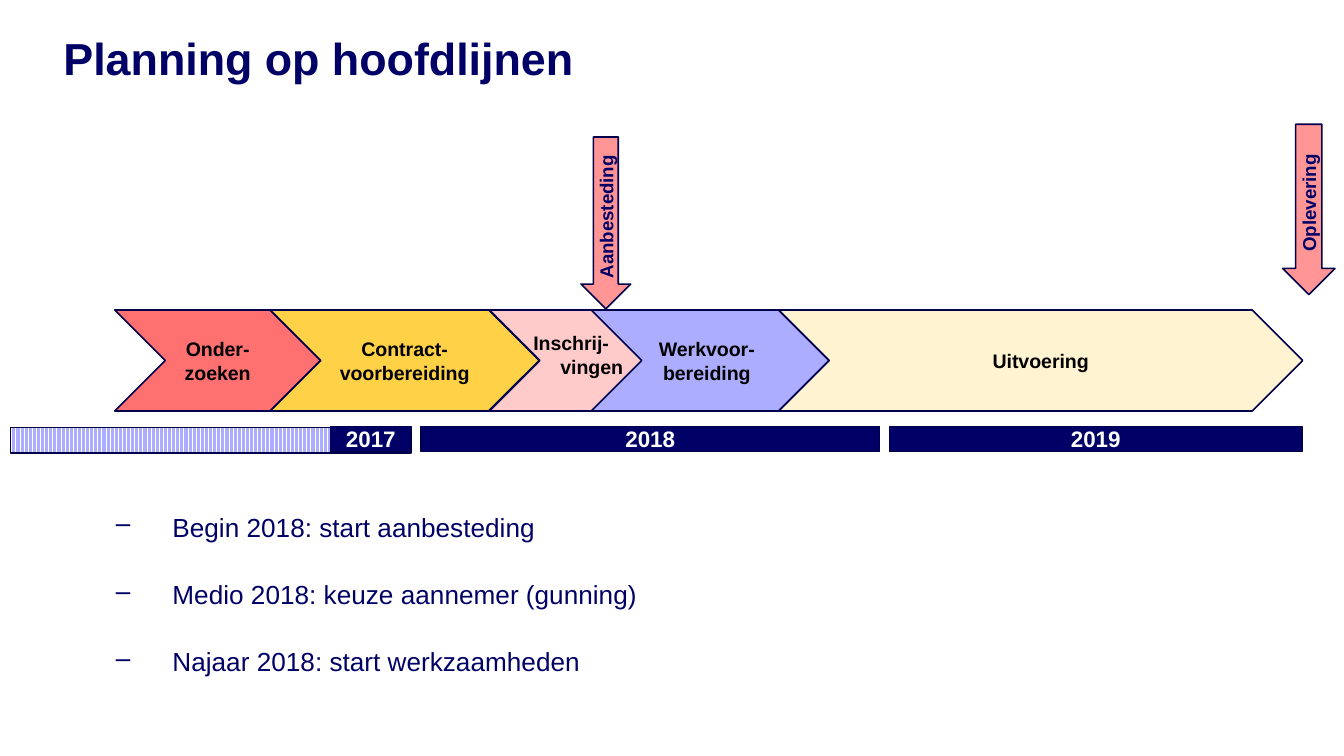
from lxml import etree
from pptx import Presentation
from pptx.dml.color import RGBColor
from pptx.enum.dml import MSO_PATTERN
from pptx.enum.shapes import MSO_SHAPE
from pptx.enum.text import MSO_ANCHOR, PP_ALIGN
from pptx.oxml.ns import qn
from pptx.util import Cm, Pt

RECT, CHEVRON, ARROW = MSO_SHAPE.RECTANGLE, MSO_SHAPE.CHEVRON, MSO_SHAPE.DOWN_ARROW
STRIPES = MSO_PATTERN.DARK_VERTICAL
CENTER, LEFT = PP_ALIGN.CENTER, PP_ALIGN.LEFT
MIDDLE, TOP = MSO_ANCHOR.MIDDLE, MSO_ANCHOR.TOP

COLORS = {
    "navy": "000066", "edge": "00004B", "black": "000000", "white": "FFFFFF",
    "red": "FF7070", "gold": "FFD147", "lilac": "ADADFF", "pink": "FFCACA",
    "cream": "FFF3D1", "rose": "FF9595",
}


def color(name):
    return RGBColor.from_string(COLORS[name])


def style(para, size, ink, bold=True, align=LEFT):
    para.alignment = align
    font = para.font
    font.name, font.size, font.bold = "Arial", Pt(size), bold
    font.color.rgb = color(ink)


def add_text(slide, box):
    frame = slide.shapes.add_textbox(*map(Cm, box)).text_frame
    frame.word_wrap = True
    frame.vertical_anchor = TOP
    frame.margin_left = frame.margin_right = 0
    frame.margin_top = frame.margin_bottom = 0
    return frame


def add_block(slide, kind, box, fill, text="", size=10.5, ink="black"):
    shape = slide.shapes.add_shape(kind, *map(Cm, box))
    shape.shadow.inherit = False
    shape.fill.solid()
    shape.fill.fore_color.rgb = color(fill)
    shape.line.color.rgb = color("edge")
    shape.line.width = Pt(0.85)
    if text:
        frame = shape.text_frame
        frame.word_wrap = True
        frame.vertical_anchor = MIDDLE
        frame.text = text
        style(frame.paragraphs[0], size, ink, align=CENTER)
    return shape


def add_title(slide, box):
    para = add_text(slide, box).paragraphs[0]
    para.text = "Planning op hoofdlijnen"
    style(para, 24, "navy")


def add_phases(slide, box):
    left, top, width, height = box
    phases = [
        (0, 3.89, "red", "Onder-zoeken"),
        (2.94, 5.08, "gold", "Contract-voorbereiding"),
        (8.88, 4.62, "lilac", "Werkvoor-bereiding"),
        (7.08, 2.88, "pink", ""),
        (12.55, width - 12.55, "cream", "Uitvoering"),
    ]
    for start, span, fill, text in phases:
        add_block(slide, CHEVRON, (left + start, top, span, height), fill, text)
    frame = add_text(slide, (left + 7.91, top + 0.4, 2.74, 0.9))
    frame.text = "Inschrij-\nvingen"
    for para in frame.paragraphs:
        style(para, 10.5, "black")
    frame.paragraphs[1]._p.get_or_add_pPr().set("marL", str(Cm(0.51)))


def add_marker(slide, box, text):
    shape = add_block(slide, ARROW, box, "rose", text, 10, "navy")
    shape.text_frame._txBody.bodyPr.set("vert", "vert270")


def add_years(slide, box):
    left, top, width, height = box
    past = add_block(slide, RECT, (left, top + 0.02, 7.57, height), "lilac")
    past.fill.patterned()
    past.fill.pattern = STRIPES
    past.fill.fore_color.rgb = color("lilac")
    past.fill.back_color.rgb = color("white")
    gap = 0.19
    start = left + 6.05
    for year, span in (("2017", 1.52), ("2018", 8.66), ("2019", 7.8)):
        add_block(slide, RECT, (start, top, span, height), "navy", year, 12, "white")
        start += span + gap


def add_dates(slide, box):
    frame = add_text(slide, box)
    frame.text = "\n".join([
        "Begin 2018: start aanbesteding",
        "Medio 2018: keuze aannemer (gunning)",
        "Najaar 2018: start werkzaamheden",
    ])
    for index, para in enumerate(frame.paragraphs):
        para.line_spacing = 1.05
        if index:
            para.space_before = Pt(18.5)
        props = para._p.get_or_add_pPr()
        props.set("marL", str(Cm(2.06)))
        props.set("indent", str(Cm(-1.07)))
        etree.SubElement(props, qn("a:buChar")).set("char", "–")
        style(para, 14, "navy", bold=False)


def main():
    deck = Presentation()
    deck.slide_width, deck.slide_height = Cm(25.4), Cm(14.29)
    slide = deck.slides.add_slide(deck.slide_layouts[6])
    add_title(slide, (1.2, 0.59, 23, 1.02))
    add_phases(slide, (2.17, 5.86, 22.45, 1.91))
    add_marker(slide, (10.98, 2.59, 0.94, 3.25), "Aanbesteding")
    add_marker(slide, (24.24, 2.35, 0.99, 3.22), "Oplevering")
    add_years(slide, (0.2, 8.06, 24.42, 0.48))
    add_dates(slide, (1.2, 9.63, 22.2, 4.4))
    deck.save("out.pptx")


if __name__ == "__main__":
    main()
